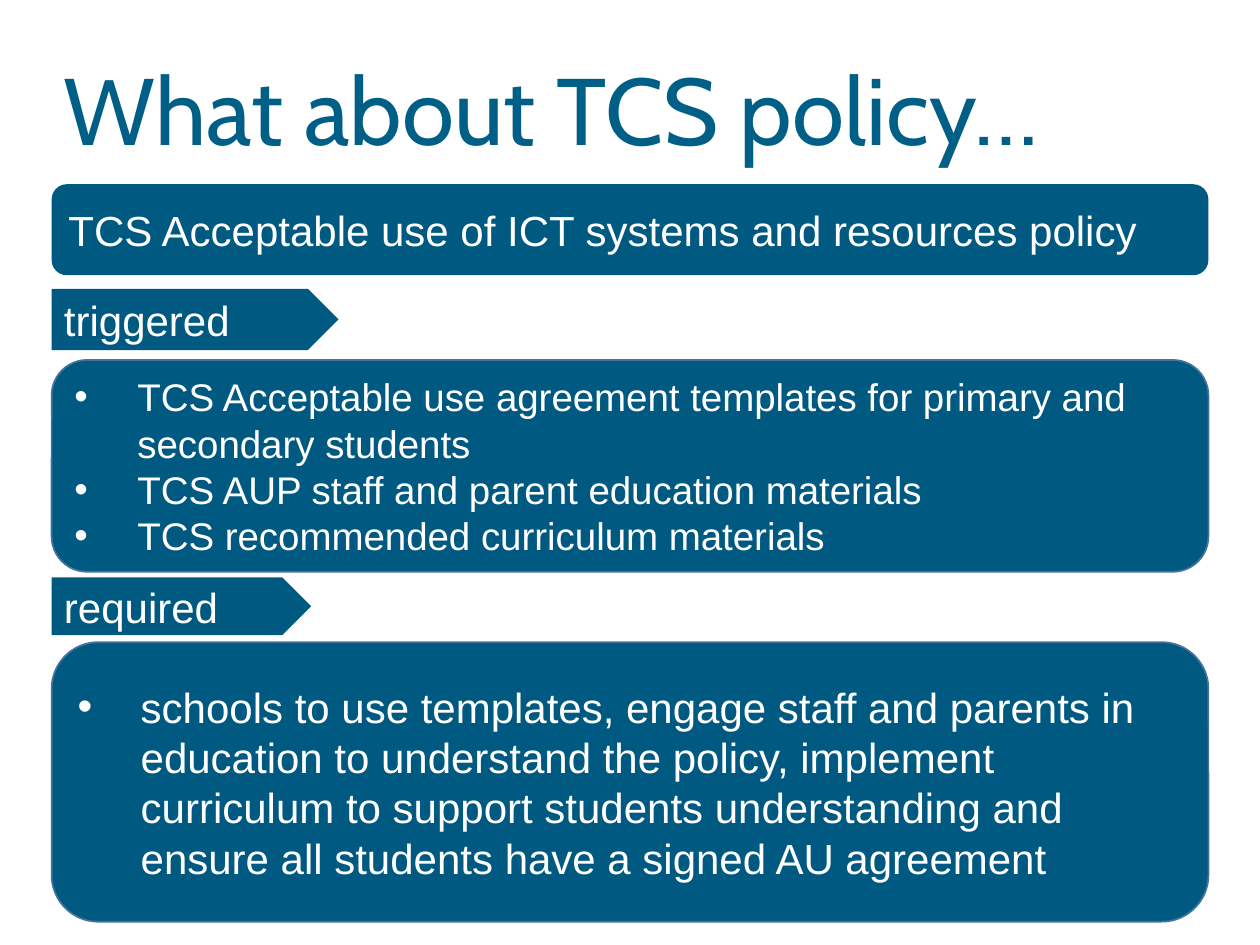
import pptx
import pptx.util
import pptx.dml.color
import pptx.enum.shapes
import pptx.enum.text
import pptx.oxml.ns
from lxml import etree

Pt = pptx.util.Pt
SHAPES = pptx.enum.shapes.MSO_SHAPE
ANCHOR = pptx.enum.text.MSO_ANCHOR
ALIGN = pptx.enum.text.PP_ALIGN

TITLE_BLUE = pptx.dml.color.RGBColor(0x00, 0x5F, 0x86)
PANEL_BLUE = pptx.dml.color.RGBColor(0x00, 0x59, 0x81)
EDGE_BLUE = pptx.dml.color.RGBColor(0x43, 0x73, 0x9E)
WHITE = pptx.dml.color.RGBColor(0xFF, 0xFF, 0xFF)

LEFT = 29.5
PANEL_WIDTH = 661
BULLET_INDENT = 36


def style_paragraph(paragraph, size, font_name, color):
    paragraph.alignment = ALIGN.LEFT
    for run in paragraph.runs:
        run.font.size = Pt(size)
        run.font.name = font_name
        run.font.color.rgb = color


def add_bullet(paragraph):
    properties = paragraph._p.get_or_add_pPr()
    properties.set("marL", str(Pt(BULLET_INDENT)))
    properties.set("indent", str(-Pt(BULLET_INDENT)))
    qn = pptx.oxml.ns.qn
    etree.SubElement(properties, qn("a:buFont"), typeface="Arial")
    etree.SubElement(properties, qn("a:buChar"), char="•")


def add_title(slide, text):
    title = slide.shapes.add_textbox(Pt(LEFT), Pt(38), Pt(620.5), Pt(60.5))
    frame = title.text_frame
    frame.word_wrap = True
    frame.vertical_anchor = ANCHOR.BOTTOM
    frame.text = text
    frame.paragraphs[0].line_spacing = 0.9
    style_paragraph(frame.paragraphs[0], 54, "Cabin", TITLE_BLUE)


def add_block(slide, preset, top, width, height, text, size=24):
    block = slide.shapes.add_shape(preset, Pt(LEFT), Pt(top), Pt(width), Pt(height))
    block.shadow.inherit = False
    block.fill.solid()
    block.fill.fore_color.rgb = PANEL_BLUE
    block.line.fill.background()
    frame = block.text_frame
    frame.word_wrap = True
    frame.vertical_anchor = ANCHOR.MIDDLE
    frame.text = text
    for paragraph in frame.paragraphs:
        style_paragraph(paragraph, size, "Arial", WHITE)
    return block


def add_arrow_label(slide, top, width, height, text):
    add_block(slide, SHAPES.PENTAGON, top, width, height, text)


def add_bullet_panel(slide, top, height, items, size):
    panel = add_block(slide, SHAPES.ROUNDED_RECTANGLE, top, PANEL_WIDTH, height,
                      "\n".join(items), size)
    panel.line.color.rgb = EDGE_BLUE
    panel.line.width = Pt(1)
    for paragraph in panel.text_frame.paragraphs:
        add_bullet(paragraph)


def main():
    deck = pptx.Presentation()
    deck.slide_width, deck.slide_height = Pt(720), Pt(540)
    slide = deck.slides.add_slide(deck.slide_layouts[6])

    # Title and policy name
    add_title(slide, "What about TCS policy…")
    add_block(slide, SHAPES.ROUNDED_RECTANGLE, 105.3, PANEL_WIDTH, 52,
              "TCS Acceptable use of ICT systems and resources policy")

    # What the policy triggered
    add_arrow_label(slide, 165, 164, 35, "triggered")
    add_bullet_panel(slide, 205.7, 121, [
        "TCS Acceptable use agreement templates for primary and secondary students",
        "TCS AUP staff and parent education materials",
        "TCS recommended curriculum materials",
    ], 22)

    # What the policy required
    add_arrow_label(slide, 330, 148.3, 33, "required")
    add_bullet_panel(slide, 367, 159.7, [
        "schools to use templates, engage staff and parents in education to "
        "understand the policy, implement curriculum to support students "
        "understanding and ensure all students have a signed AU agreement",
    ], 24)

    deck.save("out.pptx")


if __name__ == "__main__":
    main()
